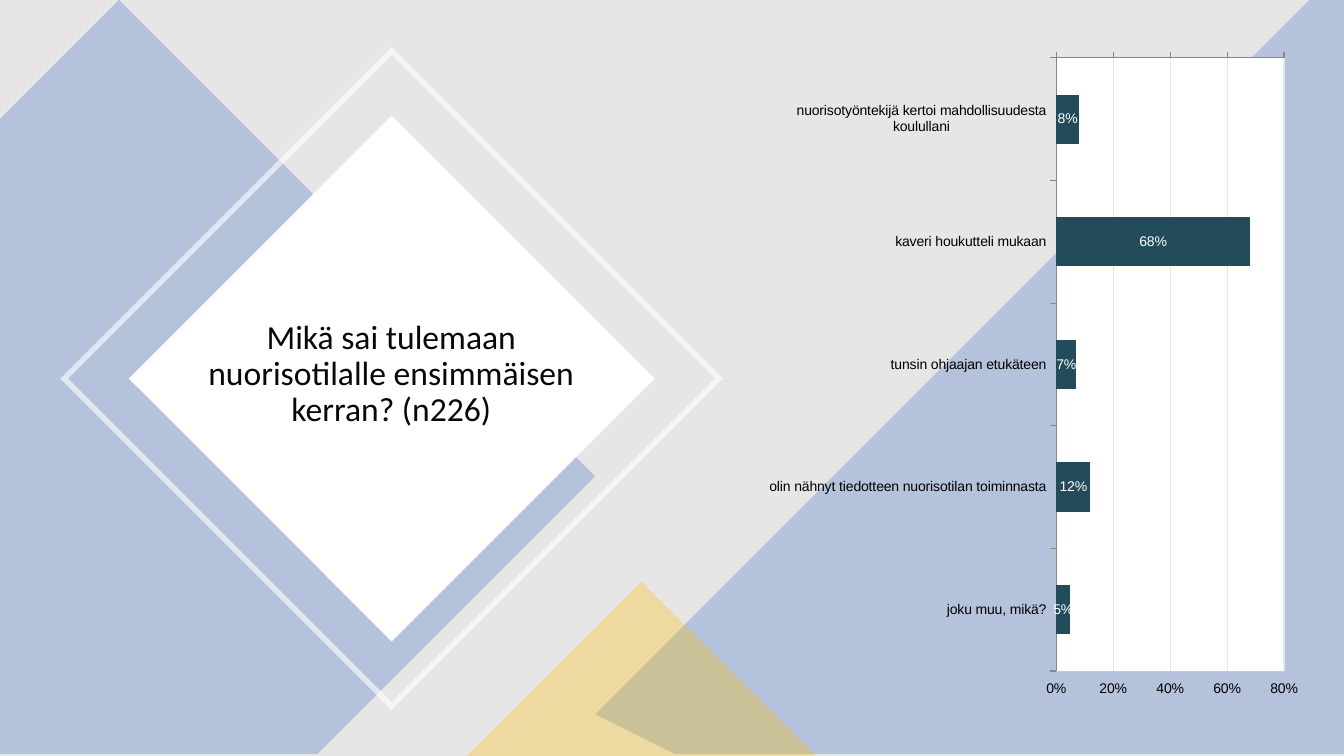
import pptx
import pptx.chart.data
import pptx.dml.color
import pptx.enum.chart
import pptx.enum.shapes
import pptx.enum.text
import pptx.oxml.ns
import pptx.oxml.xmlchemy
import pptx.util
from pptx.util import Cm

RGBColor = pptx.dml.color.RGBColor
SHAPE = pptx.enum.shapes.MSO_SHAPE

GREY = RGBColor(0xE7, 0xE6, 0xE6)
BLUE = RGBColor(0x44, 0x72, 0xC4)
GOLD = RGBColor(0xFF, 0xC0, 0x00)
WHITE = RGBColor(0xFF, 0xFF, 0xFF)
BLACK = RGBColor(0x00, 0x00, 0x00)
TITLE_INK = RGBColor(0x08, 0x08, 0x08)
TEAL = RGBColor(0x23, 0x4C, 0x5A)
GRID = RGBColor(0xE6, 0xE6, 0xE6)
AXIS = RGBColor(0x87, 0x87, 0x87)

WIDTH, HEIGHT = 33.87, 19.05
DIAMOND_CENTRE = (9.87, 9.54)
LEFT_BAND = [(2.74, 0.05), (14.78, 12.09), (7.82, HEIGHT), (0, HEIGHT), (0, 2.77)]
RIGHT_BAND = [(33.05, 0), (WIDTH, 0), (WIDTH, HEIGHT), (16.74, HEIGHT), (15.37, 17.68)]
ANSWERS = {
    "nuorisotyöntekijä kertoi mahdollisuudesta koulullani": 0.08,
    "kaveri houkutteli mukaan": 0.68,
    "tunsin ohjaajan etukäteen": 0.07,
    "olin nähnyt tiedotteen nuorisotilan toiminnasta": 0.12,
    "joku muu, mikä?": 0.05,
}


def add_element(parent, tag, value=None):
    element = pptx.oxml.xmlchemy.OxmlElement(tag)
    if value is not None:
        element.set("val", value)
    parent.append(element)
    return element


def paint(shape, color, opacity=100):
    shape.shadow.inherit = False
    shape.line.fill.background()
    shape.fill.solid()
    shape.fill.fore_color.rgb = color
    if opacity < 100:
        swatch = next(shape.element.iter(pptx.oxml.ns.qn("a:srgbClr")))
        add_element(swatch, "a:alpha", str(opacity * 1000))


def add_block(page, kind, left, top, width, height, color, opacity=100):
    block = page.shapes.add_shape(kind, Cm(left), Cm(top), Cm(width), Cm(height))
    paint(block, color, opacity)
    return block


def add_band(page, corners):
    builder = page.shapes.build_freeform(*corners[0], scale=Cm(1))
    builder.add_line_segments(corners[1:], close=True)
    paint(builder.convert_to_shape(), BLUE, 30)


def add_diamond(page, kind, side, opacity=100):
    left, top = (centre - side / 2 for centre in DIAMOND_CENTRE)
    diamond = add_block(page, kind, left, top, side, side, WHITE, opacity)
    diamond.rotation = 45
    return diamond


def place_title(page, text):
    title = page.shapes.title
    title.element.getparent().append(title.element)
    title.left, title.top, title.width, title.height = Cm(4.83), Cm(7.57), Cm(10.06), Cm(3.73)
    frame = title.text_frame
    frame.word_wrap = True
    frame.auto_size = pptx.enum.text.MSO_AUTO_SIZE.NONE
    frame.vertical_anchor = pptx.enum.text.MSO_ANCHOR.MIDDLE
    para = frame.paragraphs[0]
    para.alignment = pptx.enum.text.PP_ALIGN.CENTER
    para.line_spacing = 0.9
    para.space_after = pptx.util.Pt(6)
    span = para.add_run()
    span.text = text
    span.font.name = "Calibri"
    span.font.size = pptx.util.Pt(24)
    span.font.color.rgb = TITLE_INK


def style_font(font, color):
    font.name = "Arial"
    font.size = pptx.util.Pt(10)
    font.color.rgb = color


def style_axis(axis):
    axis.major_tick_mark = pptx.enum.chart.XL_TICK_MARK.OUTSIDE
    axis.minor_tick_mark = pptx.enum.chart.XL_TICK_MARK.NONE
    axis.format.line.color.rgb = AXIS
    axis.format.line.width = pptx.util.Pt(0.75)
    style_font(axis.tick_labels.font, BLACK)


def style_plot_area(chart):
    chart_xml = chart.plots[0]._element.getparent()
    for old in chart_xml.findall(pptx.oxml.ns.qn("c:layout")):
        chart_xml.remove(old)
    layout = pptx.oxml.xmlchemy.OxmlElement("c:layout")
    chart_xml.insert(0, layout)
    manual = add_element(layout, "c:manualLayout")
    settings = {"layoutTarget": "inner", "xMode": "edge", "yMode": "edge",
                "x": "0.542", "y": "0.019", "w": "0.414", "h": "0.922"}
    for name, value in settings.items():
        add_element(manual, "c:" + name, value)
    look = add_element(chart_xml, "c:spPr")
    add_element(add_element(look, "a:solidFill"), "a:srgbClr", str(WHITE))


def add_answer_chart(page):
    data = pptx.chart.data.CategoryChartData(number_format="0%")
    data.categories = list(ANSWERS)
    data.add_series("Series 1", list(ANSWERS.values()))
    chart = page.shapes.add_chart(
        pptx.enum.chart.XL_CHART_TYPE.BAR_CLUSTERED,
        Cm(19.1), Cm(1.14), Cm(13.87), Cm(16.76), data).chart
    chart.has_legend = False
    chart.has_title = False
    style_font(chart.font, BLACK)
    style_plot_area(chart)

    style_axis(chart.category_axis)
    chart.category_axis.reverse_order = True
    values = chart.value_axis
    style_axis(values)
    values.minimum_scale, values.maximum_scale, values.major_unit = 0, 0.8, 0.2
    values.tick_label_position = pptx.enum.chart.XL_TICK_LABEL_POSITION.HIGH
    values.tick_labels.number_format = "0%"
    values.tick_labels.number_format_is_linked = False
    values.has_major_gridlines = True
    values.major_gridlines.format.line.color.rgb = GRID
    values.major_gridlines.format.line.width = pptx.util.Pt(0.75)

    plot = chart.plots[0]
    plot.gap_width = 150
    plot.vary_by_categories = False
    bars = plot.series[0]
    bars.format.fill.solid()
    bars.format.fill.fore_color.rgb = TEAL
    labels = bars.data_labels
    labels.show_value = True
    labels.number_format = "0%"
    labels.number_format_is_linked = False
    labels.position = pptx.enum.chart.XL_LABEL_POSITION.CENTER
    style_font(labels.font, WHITE)


def main():
    deck = pptx.Presentation()
    deck.slide_width, deck.slide_height = Cm(WIDTH), Cm(HEIGHT)
    page = deck.slides.add_slide(deck.slide_layouts.get_by_name("Title Only"))
    add_block(page, SHAPE.RECTANGLE, 0, 0, WIDTH, HEIGHT, GREY)
    add_band(page, LEFT_BAND)
    add_band(page, RIGHT_BAND)
    add_block(page, SHAPE.ISOSCELES_TRIANGLE, 11.76, 14.66, 8.81, 4.39, GOLD, 30)
    add_diamond(page, SHAPE.RECTANGLE, 9.37)
    add_diamond(page, SHAPE.FRAME, 11.81, 60).adjustments[0] = 0.012
    place_title(page, "Mikä sai tulemaan nuorisotilalle ensimmäisen kerran? (n226)")
    add_answer_chart(page)
    deck.save("out.pptx")


if __name__ == "__main__":
    main()
